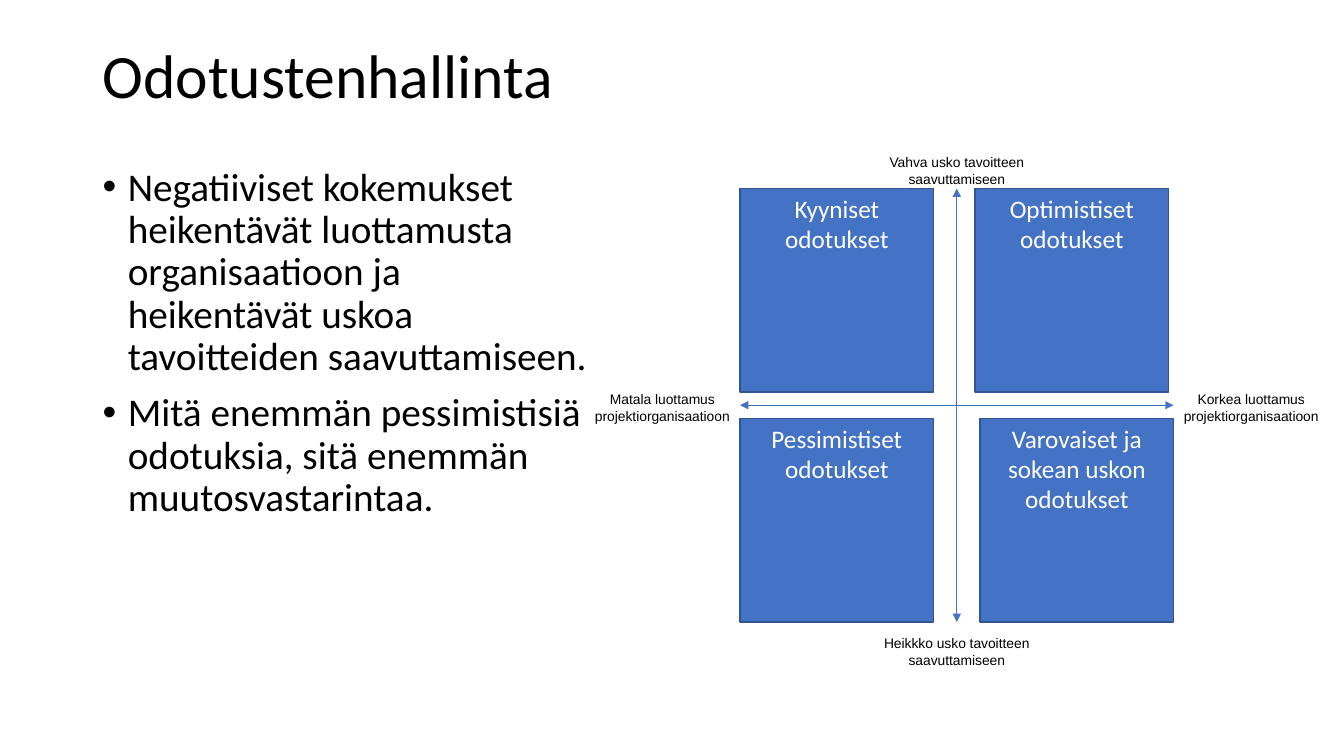
from pptx import Presentation
from pptx.dml.color import RGBColor
from pptx.enum.shapes import MSO_CONNECTOR, MSO_SHAPE
from pptx.enum.text import MSO_ANCHOR, PP_ALIGN
from pptx.oxml.ns import qn
from pptx.util import Inches, Pt
from lxml.etree import SubElement


def color(hex_string):
    return RGBColor.from_string(hex_string)


class SlideBuilder:
    TEXT, ACCENT, EDGE, LIGHT = "000000", "4472C4", "325491", "FFFFFF"
    HEADING_FONT, LABEL_FONT = "Calibri", "Arial"

    def __init__(self, slide):
        self.slide = slide

    def fill_text(self, shape, paragraphs, size, font, ink, align=PP_ALIGN.LEFT):
        frame = shape.text_frame
        frame.word_wrap = True
        frame.vertical_anchor = MSO_ANCHOR.TOP
        frame.text = "\n".join(paragraphs)
        for paragraph in frame.paragraphs:
            paragraph.alignment = align
            paragraph.font.size = Pt(size)
            paragraph.font.name = font
            paragraph.font.color.rgb = color(ink)
        return frame.paragraphs

    def text_box(self, left, top, width, height):
        return self.slide.shapes.add_textbox(
            Inches(left), Inches(top), Inches(width), Inches(height))

    def title(self, text, *box):
        [heading] = self.fill_text(self.text_box(*box), [text], 44, self.HEADING_FONT, self.TEXT)
        heading.line_spacing = 0.9

    def bullets(self, items, *box):
        for paragraph in self.fill_text(self.text_box(*box), items, 28,
                                        self.HEADING_FONT, self.TEXT):
            paragraph.line_spacing = 0.9
            paragraph.space_before = Pt(10)
            properties = paragraph._p.get_or_add_pPr()
            properties.set("marL", str(Inches(0.25)))
            properties.set("indent", str(Inches(-0.25)))
            SubElement(properties, qn("a:buFont"), typeface="Arial")
            SubElement(properties, qn("a:buChar"), char="•")

    def axis_label(self, text, left, top):
        self.fill_text(self.text_box(left, top, 1.84, 0.37), [text], 9.9,
                       self.LABEL_FONT, self.TEXT, PP_ALIGN.CENTER)

    def quadrant(self, text, left, top):
        square = self.slide.shapes.add_shape(
            MSO_SHAPE.RECTANGLE, Inches(left), Inches(top), Inches(1.92), Inches(2.02))
        square.shadow.inherit = False
        square.fill.solid()
        square.fill.fore_color.rgb = color(self.ACCENT)
        square.line.color.rgb = color(self.EDGE)
        square.line.width = Pt(1)
        self.fill_text(square, [text], 18, self.HEADING_FONT, self.LIGHT, PP_ALIGN.CENTER)

    def axis(self, x1, y1, x2, y2):
        """Draw a thin line with an arrowhead at both ends."""
        arrow = self.slide.shapes.add_connector(
            MSO_CONNECTOR.STRAIGHT, Inches(x1), Inches(y1), Inches(x2), Inches(y2))
        arrow.line.color.rgb = color(self.ACCENT)
        arrow.line.width = Pt(0.5)
        outline = arrow.line._get_or_add_ln()
        for end in ("a:headEnd", "a:tailEnd"):
            SubElement(outline, qn(end), type="triangle")
        SubElement(arrow._element.spPr, qn("a:effectLst"))


def main():
    presentation = Presentation()
    presentation.slide_width = Inches(13.33)
    presentation.slide_height = Inches(7.5)
    builder = SlideBuilder(presentation.slides.add_slide(presentation.slide_layouts[6]))

    builder.title("Odotustenhallinta", 0.92, 0.4, 11.5, 1.45)
    builder.bullets([
        "Negatiiviset kokemukset heikentävät luottamusta organisaatioon ja "
        "heikentävät uskoa tavoitteiden saavuttamiseen.",
        "Mitä enemmän pessimistisiä odotuksia, sitä enemmän muutosvastarintaa.",
    ], 0.92, 1.61, 5.07, 5.14)

    left, right, top, bottom = 7.34, 11.64, 1.87, 6.17
    center_x, center_y = (left + right) / 2, (top + bottom) / 2
    builder.axis(center_x, top, center_x, bottom)
    builder.axis(left, center_y, right, center_y)

    lower_top = 4.15
    for text, x, y in [
        ("Kyyniset odotukset", left, top),
        ("Pessimistiset odotukset", left, lower_top),
        ("Varovaiset ja sokean uskon odotukset", 9.72, lower_top),
        ("Optimistiset odotukset", 9.67, top),
    ]:
        builder.quadrant(text, x, y)

    for text, x, y in [
        ("Matala luottamus projektiorganisaatioon", 5.65, 3.83),
        ("Korkea luottamus projektiorganisaatioon", 11.49, 3.83),
        ("Vahva usko tavoitteen saavuttamiseen", 8.57, 1.48),
        ("Heikkko usko tavoitteen saavuttamiseen", 8.57, 6.25),
    ]:
        builder.axis_label(text, x, y)

    presentation.save("out.pptx")


if __name__ == "__main__":
    main()
